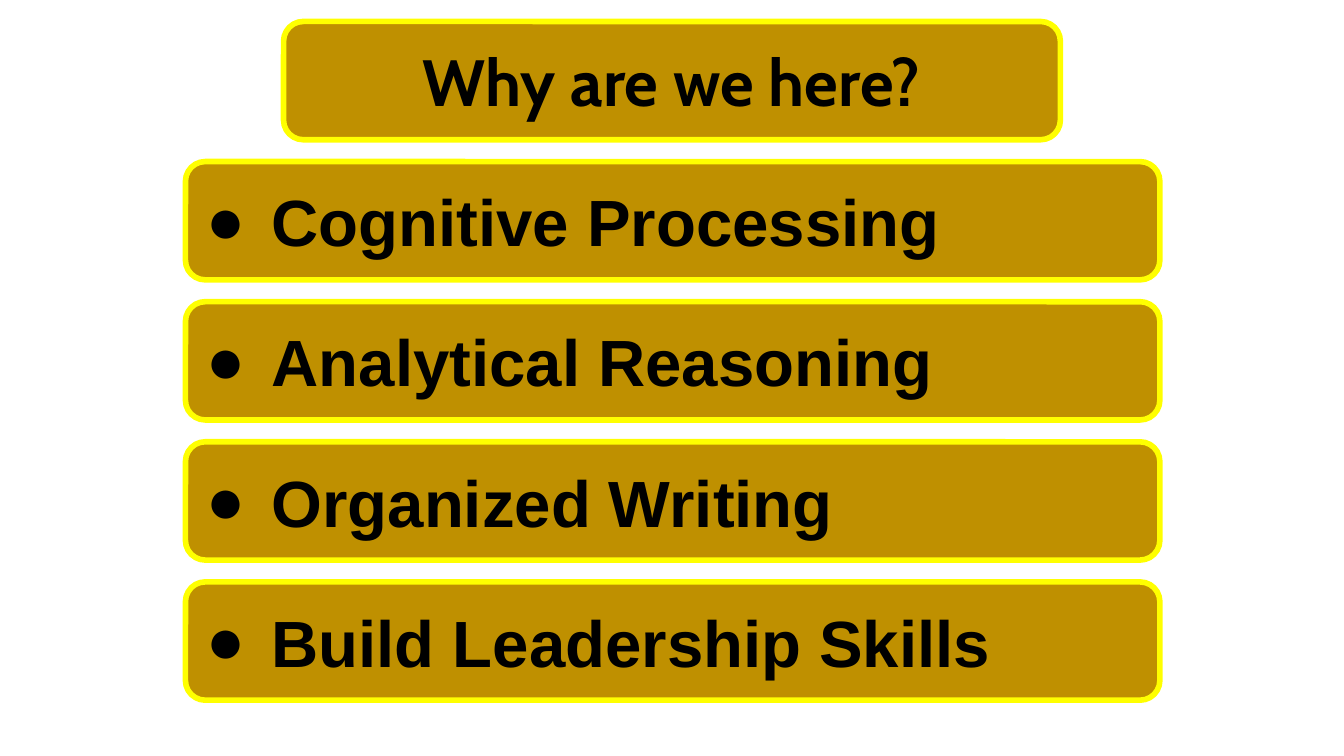
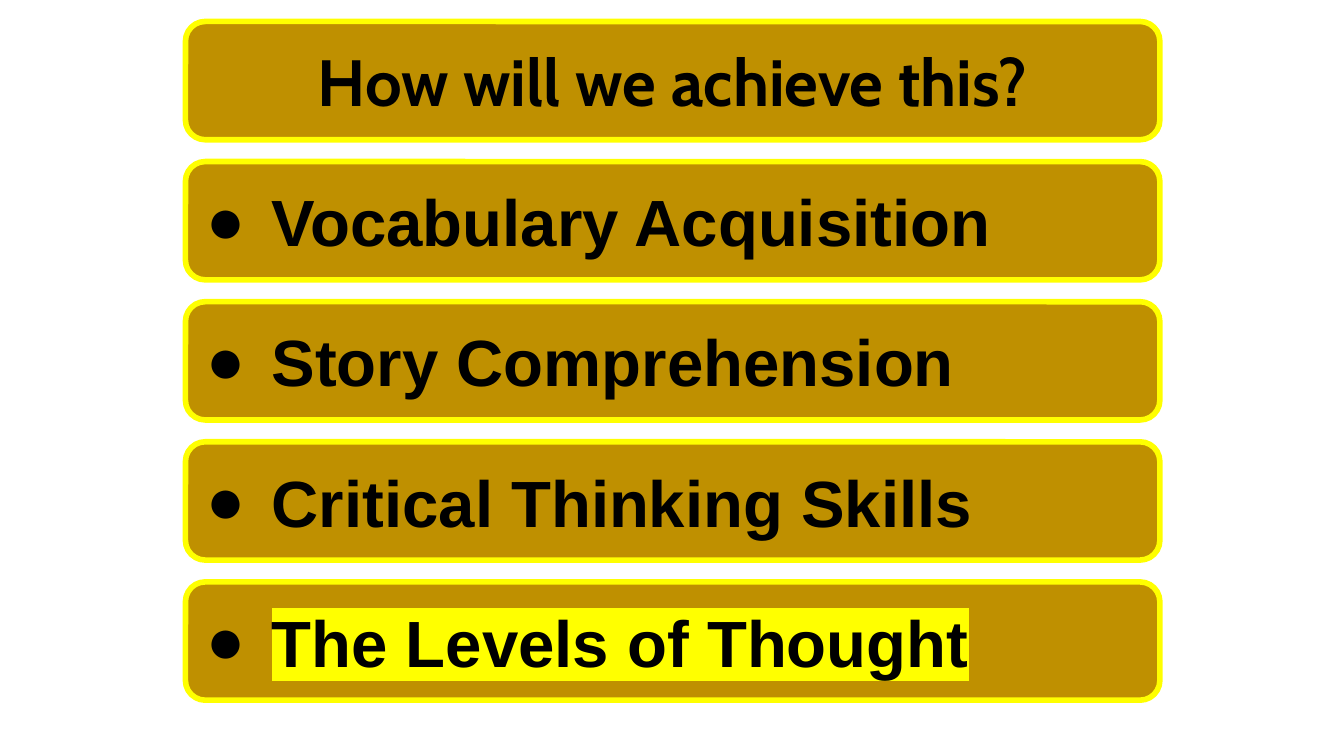
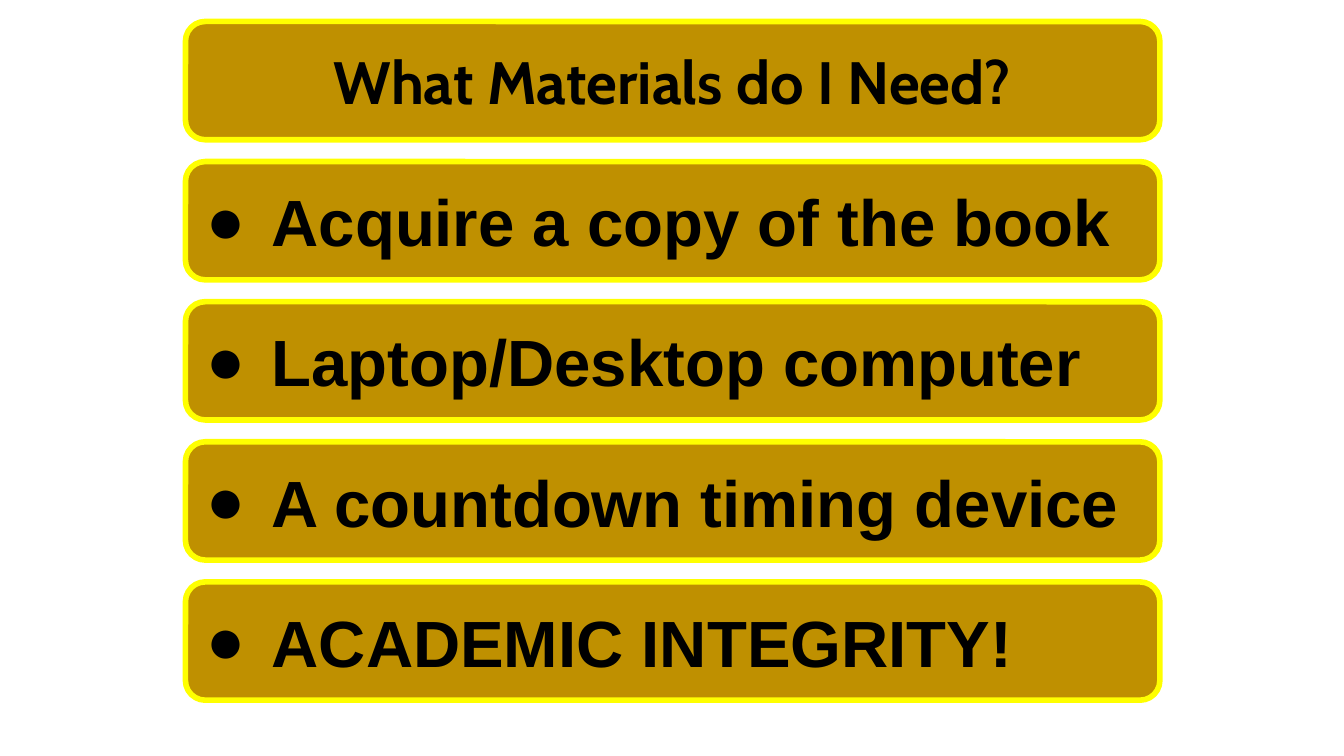
from lxml.etree import SubElement
from pptx import Presentation
from pptx.dml.color import RGBColor
from pptx.enum.shapes import MSO_SHAPE
from pptx.enum.text import MSO_ANCHOR, MSO_AUTO_SIZE, PP_ALIGN
from pptx.oxml.ns import qn
from pptx.util import Inches, Pt

GOLD, YELLOW, BLACK = "BF9000", "FFFF00", "000000"
BAND_LEFT, BAND_WIDTH, BAND_HEIGHT = 1.38, 7.25, 0.88
FIRST_TOP, LAST_TOP = 0.16, 4.33
BAND_STEP = (LAST_TOP - FIRST_TOP) / 4
INDENT, HANGING = 0.5, -0.49


def color(hex_code):
    return RGBColor.from_string(hex_code)


def write(frame, text, font="Arial", size=35, align=PP_ALIGN.LEFT, bullet=None, highlight=None):
    frame.word_wrap = True
    frame.auto_size = MSO_AUTO_SIZE.NONE
    frame.vertical_anchor = MSO_ANCHOR.MIDDLE
    frame.margin_left = frame.margin_right = Inches(0.1)
    frame.margin_top = frame.margin_bottom = Inches(0.1)
    paragraph = frame.paragraphs[0]
    paragraph.alignment = align
    paragraph.space_before = Pt(0)
    if bullet:
        properties = paragraph._p.get_or_add_pPr()
        properties.set("marL", str(Inches(INDENT)))
        properties.set("indent", str(Inches(HANGING)))
        bullet_color = SubElement(properties, qn("a:buClr"))
        SubElement(bullet_color, qn("a:srgbClr"), val=BLACK)
        SubElement(properties, qn("a:buFont"), typeface=font)
        SubElement(properties, qn("a:buChar"), char=bullet)
    run = paragraph.add_run()
    run.text = text
    run.font.size = Pt(size)
    run.font.bold = True
    run.font.color.rgb = color(BLACK)
    if highlight:
        marker = SubElement(run._r.get_or_add_rPr(), qn("a:highlight"))
        SubElement(marker, qn("a:srgbClr"), val=highlight)
    run.font.name = font


prs = Presentation()
prs.slide_width = Inches(10)
prs.slide_height = prs.slide_width * 9 // 16

agenda = [
    ("Why are we here?", 35, 2.11, 5.78,
     ["Cognitive Processing", "Analytical Reasoning", "Organized Writing", "Build Leadership Skills"]),
    ("How will we achieve this?", 35, BAND_LEFT, BAND_WIDTH,
     ["Vocabulary Acquisition", "Story Comprehension", "Critical Thinking Skills", "The Levels of Thought"]),
    ("What Materials do I Need?", 32, BAND_LEFT, BAND_WIDTH,
     ["Acquire a copy of the book", "Laptop/Desktop computer", "A countdown timing device", "ACADEMIC INTEGRITY!"]),
]
highlights = {"The Levels of Thought": YELLOW}

for question, question_size, question_left, question_width, answers in agenda:
    slide = prs.slides.add_slide(prs.slide_layouts[5])
    title = slide.shapes.title
    title.left, title.top = Inches(question_left), Inches(FIRST_TOP)
    title.width, title.height = Inches(question_width), Inches(BAND_HEIGHT)
    write(title.text_frame, question, font="Cabin", size=question_size, align=PP_ALIGN.CENTER)

    for row, answer in enumerate([None] + answers):
        left, width = (BAND_LEFT, BAND_WIDTH) if answer else (question_left, question_width)
        band = slide.shapes.add_shape(
            MSO_SHAPE.ROUNDED_RECTANGLE, Inches(left), Inches(FIRST_TOP + row * BAND_STEP),
            Inches(width), Inches(BAND_HEIGHT))
        band.shadow.inherit = False
        band.fill.solid()
        band.fill.fore_color.rgb = color(GOLD)
        band.line.color.rgb = color(YELLOW)
        band.line.width = Pt(3)
        if answer:
            write(band.text_frame, answer, bullet="●", highlight=highlights.get(answer))
        else:
            title._element.addprevious(band._element)

prs.save("out.pptx")
